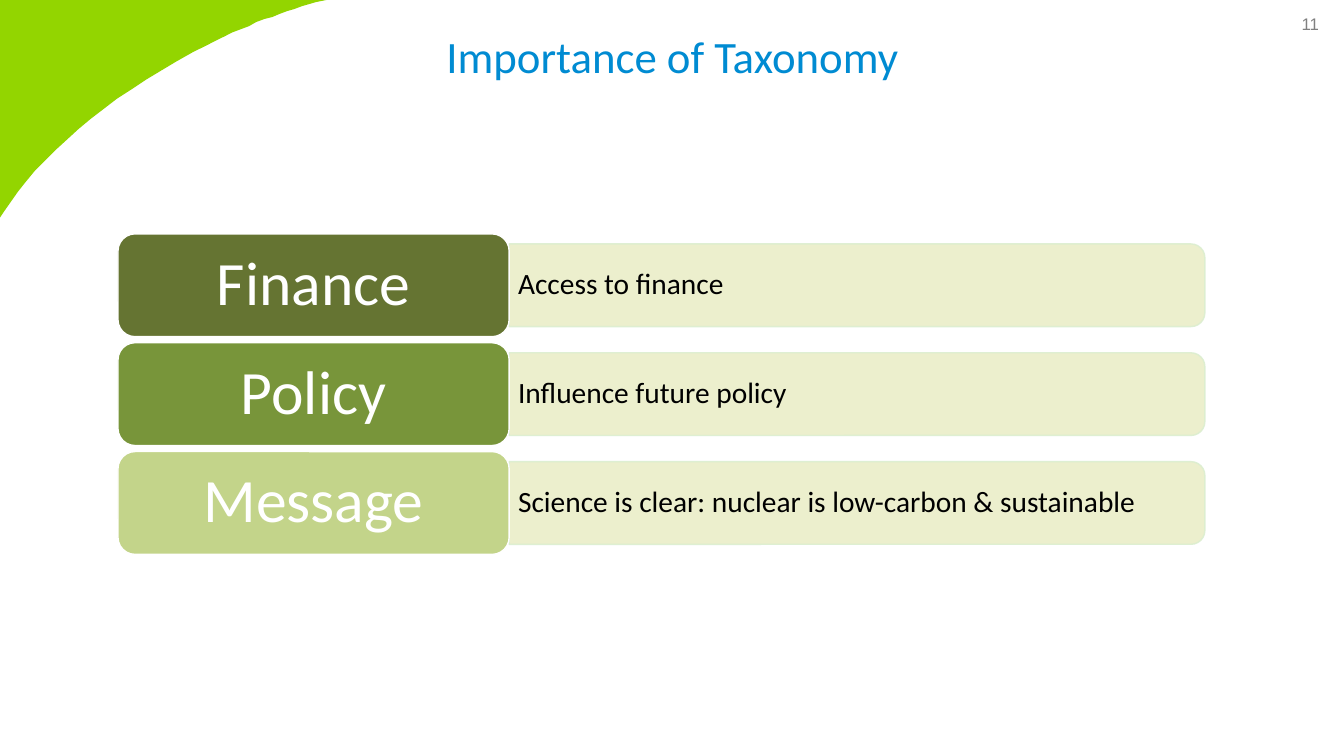
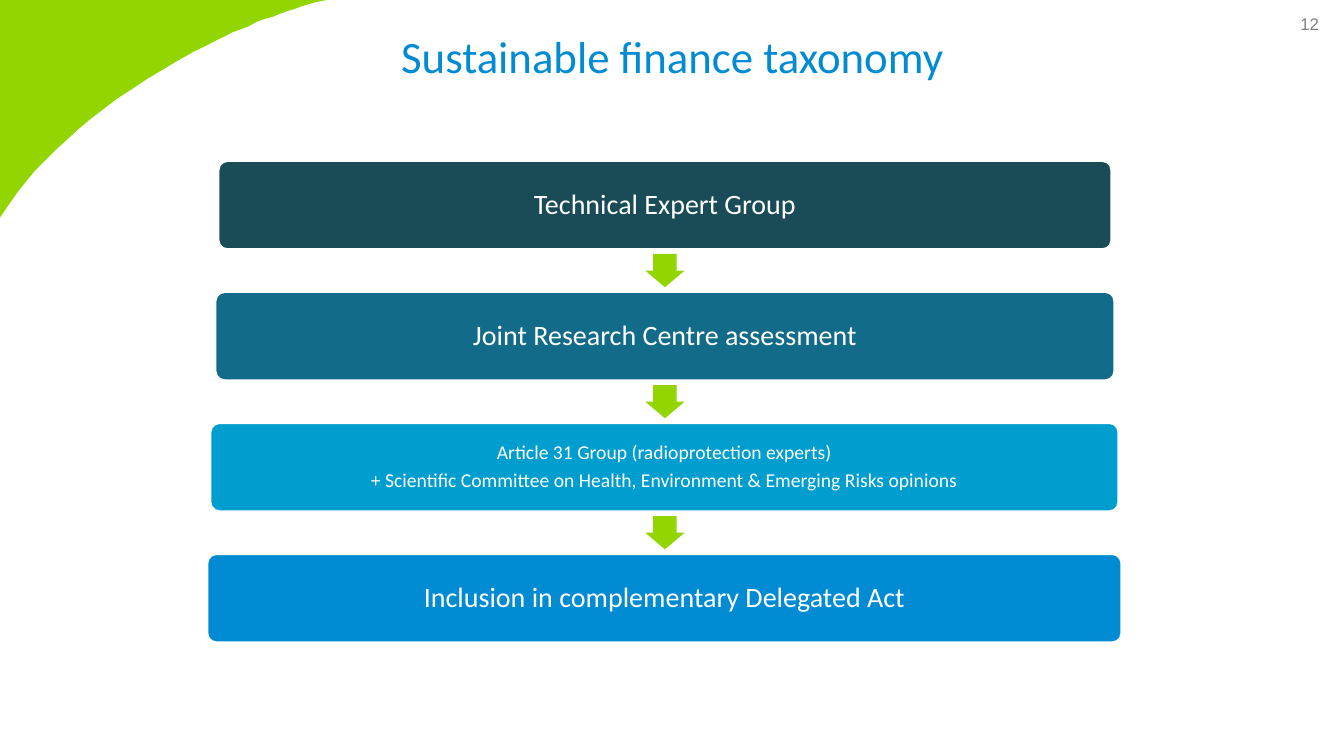
import dataclasses
import typing

import lxml.etree
import pptx
import pptx.dml.color
import pptx.enum.shapes
import pptx.enum.text
import pptx.oxml.ns
import pptx.util

EMU_PER_PX = 9144
SHAPES = pptx.enum.shapes.MSO_SHAPE
ALIGN = pptx.enum.text.PP_ALIGN

LIME = "93D500"
BLUE = "008BD2"
WHITE = "FFFFFF"
BLACK = "000000"
GREY = "808080"
BAR_FILL = "EAEEC8"
BAR_LINE = "DCEED0"

Point = tuple[int, int]
CORNER_START: Point = (314, 2)
CORNER_CURVES: list[tuple[Point, Point, Point]] = [
    ((276, 13), (234, 29), (191, 52)),
    ((105, 98), (37, 157), (4, 210)),
]
CURVE_STEPS = 16


@dataclasses.dataclass(frozen=True)
class Area:
    left: int
    top: int
    width: int
    height: int

    def emu(self) -> list[int]:
        return [px(value) for value in dataclasses.astuple(self)]


@dataclasses.dataclass(frozen=True)
class TextStyle:
    size: int
    color: str
    align: typing.Any = ALIGN.CENTER
    font: str = "Calibri"
    line_spacing: float = 0.9
    gap: int = 0
    anchor: typing.Any = pptx.enum.text.MSO_ANCHOR.MIDDLE


@dataclasses.dataclass(frozen=True)
class Reason:
    label: str
    detail: str
    color: str


@dataclasses.dataclass(frozen=True)
class Step:
    lines: list[str]
    width: int
    color: str
    size: int = 20


TITLE = TextStyle(32, BLUE)
NUMBER = TextStyle(12, GREY, ALIGN.RIGHT, "Arial", 1.0,
                   anchor=pptx.enum.text.MSO_ANCHOR.TOP)
LABEL = TextStyle(44, WHITE)
DETAIL = TextStyle(21, BLACK, ALIGN.LEFT)

REASONS = [
    Reason("Finance", "Access to finance", "657432"),
    Reason("Policy", "Influence future policy", "78953A"),
    Reason("Message", "Science is clear: nuclear is low-carbon & sustainable", "C3D48A"),
]
STEPS = [
    Step(["Technical Expert Group"], 885, "194C57"),
    Step(["Joint Research Centre assessment"], 891, "126B89"),
    Step(["Article 31 Group (radioprotection experts)",
          "+ Scientific Committee on Health, Environment & Emerging Risks opinions"],
         900, "009DCF", 14),
    Step(["Inclusion in complementary Delegated Act"], 906, BLUE),
]


def px(value: int) -> int:
    return pptx.util.Emu(round(value * EMU_PER_PX))


def rgb(color: str) -> pptx.dml.color.RGBColor:
    return pptx.dml.color.RGBColor.from_string(color)


def set_all(target: typing.Any, values: dict[str, typing.Any]) -> None:
    for name, value in values.items():
        setattr(target, name, value)


def write(box: typing.Any, lines: list[str], style: TextStyle) -> None:
    frame = box.text_frame
    set_all(frame, {"word_wrap": True, "vertical_anchor": style.anchor})
    for index, line in enumerate(lines):
        para = frame.add_paragraph() if index else frame.paragraphs[0]
        set_all(para, {"alignment": style.align, "line_spacing": style.line_spacing})
        if index:
            para.space_before = pptx.util.Pt(style.gap)
        span = para.add_run()
        span.text = line
        set_all(span.font, {"name": style.font, "size": pptx.util.Pt(style.size)})
        span.font.color.rgb = rgb(style.color)


def paint(shape: typing.Any, fill: str, line: str | None = None) -> None:
    shape.shadow.inherit = False
    shape.fill.solid()
    shape.fill.fore_color.rgb = rgb(fill)
    if line is None:
        shape.line.fill.background()
    else:
        shape.line.color.rgb = rgb(line)
        shape.line.width = pptx.util.Pt(1)


def add_shape(page: typing.Any, kind: typing.Any, area: Area, fill: str,
              line: str | None = None, adjustments: tuple[float, ...] = ()) -> typing.Any:
    shape = page.shapes.add_shape(kind, *area.emu())
    paint(shape, fill, line)
    for index, value in enumerate(adjustments):
        shape.adjustments[index] = value
    return shape


def add_text(page: typing.Any, area: Area, text: str, style: TextStyle) -> None:
    write(page.shapes.add_textbox(*area.emu()), [text], style)


def set_opacity(shape: typing.Any, percent: int) -> None:
    for color in shape.element.spPr.iter(pptx.oxml.ns.qn("a:srgbClr")):
        alpha = lxml.etree.SubElement(color, pptx.oxml.ns.qn("a:alpha"))
        alpha.set("val", str(percent * 1000))


def curve_points(start: Point, first: Point, second: Point,
                 end: Point) -> list[tuple[float, float]]:
    points = []
    for step in range(1, CURVE_STEPS + 1):
        t = step / CURVE_STEPS
        weights = ((1 - t) ** 3, 3 * t * (1 - t) ** 2, 3 * t * t * (1 - t), t ** 3)
        x, y = (sum(weight * value for weight, value in zip(weights, axis))
                for axis in zip(start, first, second, end))
        points.append((x, y))
    return points


def add_corner(page: typing.Any) -> None:
    outline: list[tuple[float, float]] = [(324, 0), CORNER_START]
    start = CORNER_START
    for first, second, end in CORNER_CURVES:
        outline += curve_points(start, first, second, end)
        start = end
    builder = page.shapes.build_freeform(0, 0, scale=EMU_PER_PX)
    builder.add_line_segments([*outline, (0, 216)], close=True)
    paint(builder.convert_to_shape(), LIME)


def add_page(deck: typing.Any, title: str, number: int) -> typing.Any:
    page = deck.slides.add_slide(deck.slide_layouts[5])
    add_corner(page)
    add_text(page, Area(1267, 9, 51, 40), str(number), NUMBER)
    heading = page.shapes.title
    area = Area(92, 29, 1150, 59)
    set_all(heading, dict(zip(("left", "top", "width", "height"), area.emu())))
    write(heading, [title], TITLE)
    return page


def add_reason(page: typing.Any, reason: Reason, top: int) -> None:
    length, thickness = 690, 82
    middle = top + 51
    bar = add_shape(page, SHAPES.ROUND_2_SAME_RECTANGLE,
                    Area(850 - thickness // 2, middle - length // 2, thickness, length),
                    BAR_FILL, BAR_LINE)
    bar.rotation = 90
    set_opacity(bar, 90)
    add_text(page, Area(504, middle - 37, 686, 74), reason.detail, DETAIL)
    label = add_shape(page, SHAPES.ROUNDED_RECTANGLE, Area(117, top, 388, 102),
                      reason.color, WHITE)
    write(label, [reason.label], LABEL)


def add_step(page: typing.Any, step: Step, top: int) -> None:
    box = add_shape(page, SHAPES.ROUNDED_RECTANGLE,
                    Area(659 - step.width // 2, top, step.width, 87),
                    step.color, WHITE, (0.1,))
    write(box, step.lines, TextStyle(step.size, WHITE, gap=5))


def main() -> None:
    deck = pptx.Presentation()
    set_all(deck, {"slide_width": px(1333), "slide_height": px(750)})

    page = add_page(deck, "Importance of Taxonomy", 11)
    for index, reason in enumerate(REASONS):
        add_reason(page, reason, 232 + index * 108)

    page = add_page(deck, "Sustainable finance taxonomy", 12)
    for index, step in enumerate(STEPS):
        top = 160 + index * 130
        if index:
            add_shape(page, SHAPES.DOWN_ARROW, Area(640, top - 38, 39, 33),
                      LIME, adjustments=(0.6, 0.5))
        add_step(page, step, top)

    deck.save("out.pptx")


if __name__ == "__main__":
    main()
